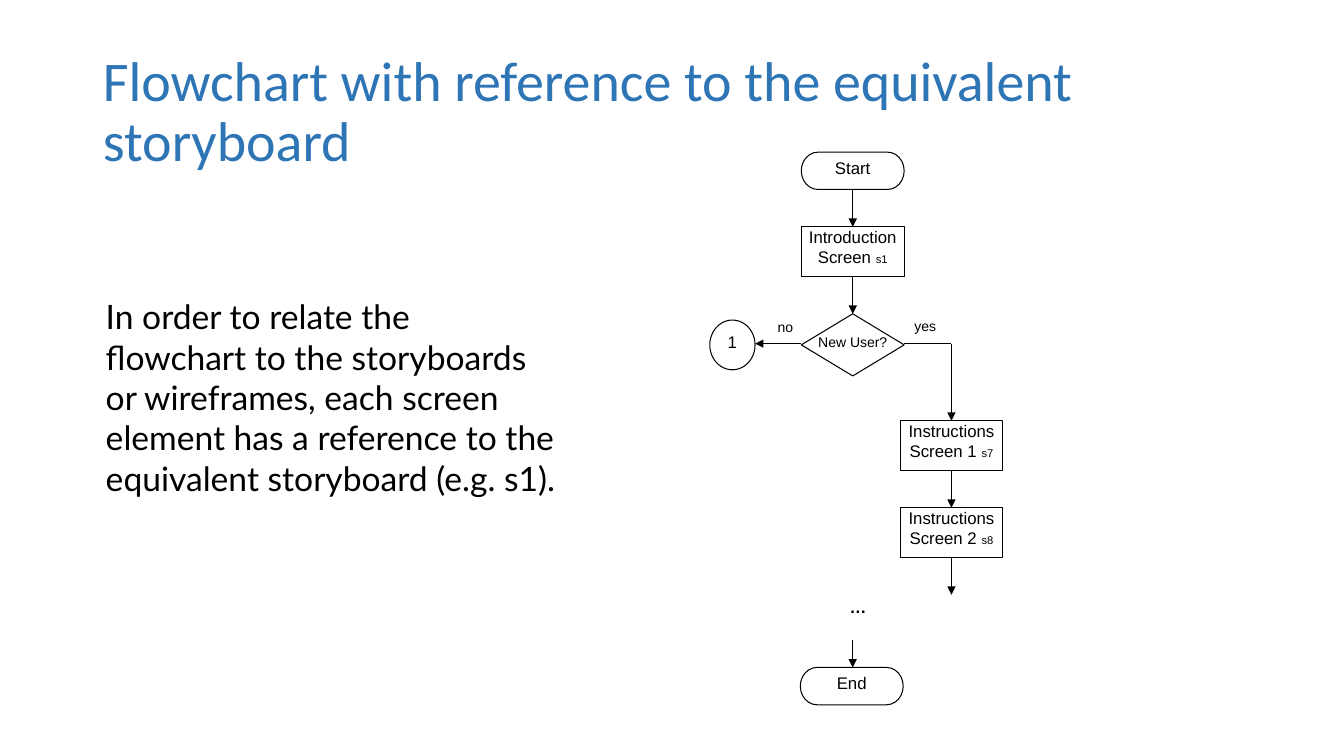
import dataclasses
import typing

import lxml.etree
import pptx
import pptx.dml.color
import pptx.enum.shapes
import pptx.enum.text
import pptx.oxml.ns
import pptx.util

Shape = pptx.enum.shapes.MSO_SHAPE
Align = pptx.enum.text.PP_ALIGN
Anchor = pptx.enum.text.MSO_ANCHOR
Inches = pptx.util.Inches
Pt = pptx.util.Pt

SLIDE_W, SLIDE_H = 13.33, 7.5
CHART_LEFT, CHART_TOP = 7.04, 1.51
COL, ROW = 1.02 / 10, 0.37 / 3
MAIN, YES, NO = 13.9, 23.5, 2.2
NODE_W, CIRCLE_W = 10, 4.4
BRANCH = 15.4


@dataclasses.dataclass(frozen=True)
class Theme:
    ink: pptx.dml.color.RGBColor = pptx.dml.color.RGBColor(0x00, 0x00, 0x00)
    heading: pptx.dml.color.RGBColor = pptx.dml.color.RGBColor(0x2E, 0x75, 0xB6)
    paper: pptx.dml.color.RGBColor = pptx.dml.color.RGBColor(0xFF, 0xFF, 0xFF)
    title_font: str = "Calibri"
    body_font: str = "Lato"
    chart_font: str = "Arial"
    title_size: int = 40
    body_size: int = 24
    node_size: int = 12
    label_size: int = 10
    ref_size: int = 8
    line: float = 0.75


THEME = Theme()


@dataclasses.dataclass(frozen=True)
class Node:
    kind: Shape
    text: str
    axis: float
    row: float
    rows: float
    cols: float = NODE_W
    ref: str = ""
    size: int = THEME.node_size


@dataclasses.dataclass(frozen=True)
class Link:
    start: tuple[float, float]
    end: tuple[float, float]
    arrow: bool = True


@dataclasses.dataclass(frozen=True)
class Label:
    text: str
    col: float
    row: float
    cols: float
    rows: float
    size: int = THEME.label_size
    bold: bool = False
    align: Align = Align.LEFT


NODES = [
    Node(Shape.FLOWCHART_TERMINATOR, "Start", MAIN, 0, 3),
    Node(Shape.FLOWCHART_PROCESS, "Introduction Screen ", MAIN, 6, 4, ref="s1"),
    Node(Shape.FLOWCHART_DECISION, "New User?", MAIN, 13, 5, size=THEME.label_size),
    Node(Shape.FLOWCHART_CONNECTOR, "1", NO, 13.5, 4, CIRCLE_W),
    Node(Shape.FLOWCHART_PROCESS, "Instructions Screen 1 ", YES, 21.6, 4, ref="s7"),
    Node(Shape.FLOWCHART_PROCESS, "Instructions Screen 2 ", YES, 28.6, 4, ref="s8"),
    Node(Shape.FLOWCHART_TERMINATOR, "End", MAIN - 0.1, 41.45, 3),
]
LINKS = [
    Link((MAIN, 3), (MAIN, 6)),
    Link((MAIN, 10), (MAIN, 13)),
    Link((MAIN - NODE_W / 2, BRANCH), (NO + CIRCLE_W / 2, BRANCH)),
    Link((MAIN + NODE_W / 2, BRANCH), (YES, BRANCH), arrow=False),
    Link((YES, BRANCH), (YES, 21.6)),
    Link((YES, 25.6), (YES, 28.6)),
    Link((YES, 32.6), (YES, 35.6)),
    Link((MAIN, 39.2), (MAIN, 41.45)),
]
LABELS = [
    Label("yes", 19.9, 13.3, 3.6, 1.9),
    Label("no", 6.6, 13.4, 3.1, 2.3),
    Label("…", 7.15, 35.75, 14.5, 2.7, THEME.node_size, True, Align.CENTER),
]


def chart_x(col: float) -> pptx.util.Length:
    return Inches(CHART_LEFT + col * COL)


def chart_y(row: float) -> pptx.util.Length:
    return Inches(CHART_TOP + row * ROW)


def share(left: float, top: float, width: float, height: float) -> list[pptx.util.Length]:
    return [
        Inches(SLIDE_W * left / 100),
        Inches(SLIDE_H * top / 100),
        Inches(SLIDE_W * width / 100),
        Inches(SLIDE_H * height / 100),
    ]


def style(p: typing.Any, font: str, size: int, color: pptx.dml.color.RGBColor, align: Align) -> None:
    p.alignment = align
    p.font.name = font
    p.font.size = Pt(size)
    p.font.color.rgb = color


def clear_insets(tf: typing.Any) -> None:
    tf.margin_left = tf.margin_top = tf.margin_right = tf.margin_bottom = 0


def draw_node(shapes: typing.Any, node: Node) -> None:
    sp = shapes.add_shape(
        node.kind, chart_x(node.axis - node.cols / 2), chart_y(node.row),
        Inches(node.cols * COL), Inches(node.rows * ROW),
    )
    sp.shadow.inherit = False
    sp.fill.background()
    sp.line.color.rgb = THEME.ink
    sp.line.width = Pt(THEME.line)
    tf = sp.text_frame
    clear_insets(tf)
    tf.word_wrap = bool(node.ref)
    tf.vertical_anchor = Anchor.TOP if node.ref else Anchor.MIDDLE
    if not node.ref:
        tf.margin_bottom = Inches(0.06)
    p = tf.paragraphs[0]
    style(p, THEME.chart_font, node.size, THEME.ink, Align.CENTER)
    p.add_run().text = node.text
    if node.ref:
        r = p.add_run()
        r.text = node.ref
        r.font.size = Pt(THEME.ref_size)


def draw_link(shapes: typing.Any, link: Link) -> None:
    (x1, y1), (x2, y2) = link.start, link.end
    cx = shapes.add_connector(
        pptx.enum.shapes.MSO_CONNECTOR.STRAIGHT,
        chart_x(x1), chart_y(y1), chart_x(x2), chart_y(y2),
    )
    cx.line.color.rgb = THEME.ink
    cx.line.width = Pt(THEME.line)
    qn = pptx.oxml.ns.qn
    if link.arrow:
        ln = cx.line._get_or_add_ln()
        lxml.etree.SubElement(ln, qn("a:tailEnd"), type="triangle")
    lxml.etree.SubElement(cx._element.spPr, qn("a:effectLst"))


def draw_label(shapes: typing.Any, label: Label) -> None:
    tb = shapes.add_textbox(
        chart_x(label.col), chart_y(label.row),
        Inches(label.cols * COL), Inches(label.rows * ROW),
    )
    tf = tb.text_frame
    clear_insets(tf)
    tf.word_wrap = True
    p = tf.paragraphs[0]
    p.text = label.text
    style(p, THEME.chart_font, label.size, THEME.ink, label.align)
    p.font.bold = label.bold


def draw_title(s: typing.Any, text: str) -> None:
    title = s.shapes.title
    title.left, title.top, title.width, title.height = share(6.9, 5.33, 86.27, 19.33)
    tf = title.text_frame
    tf.word_wrap = True
    tf.auto_size = pptx.enum.text.MSO_AUTO_SIZE.NONE
    tf.vertical_anchor = Anchor.MIDDLE
    p = tf.paragraphs[0]
    p.text = text
    p.line_spacing = 0.9
    style(p, THEME.title_font, THEME.title_size, THEME.heading, Align.LEFT)


def draw_body(s: typing.Any, text: str) -> None:
    tf = s.shapes.add_textbox(*share(7.13, 38.53, 35.18, 33.6)).text_frame
    tf.word_wrap = True
    p = tf.paragraphs[0]
    p.text = text
    style(p, THEME.body_font, THEME.body_size, THEME.ink, Align.LEFT)


def main() -> None:
    prs = pptx.Presentation()
    prs.slide_width, prs.slide_height = Inches(SLIDE_W), Inches(SLIDE_H)
    s = prs.slides.add_slide(prs.slide_layouts.get_by_name("Title Only"))
    s.background.fill.solid()
    s.background.fill.fore_color.rgb = THEME.paper
    draw_title(s, "Flowchart with reference to the equivalent storyboard")
    draw_body(
        s,
        "In order to relate the flowchart to the storyboards or wireframes, each screen "
        "element has a reference to the equivalent storyboard (e.g. s1).",
    )
    for node in NODES:
        draw_node(s.shapes, node)
    for link in LINKS:
        draw_link(s.shapes, link)
    for label in LABELS:
        draw_label(s.shapes, label)
    prs.save("out.pptx")


if __name__ == "__main__":
    main()
